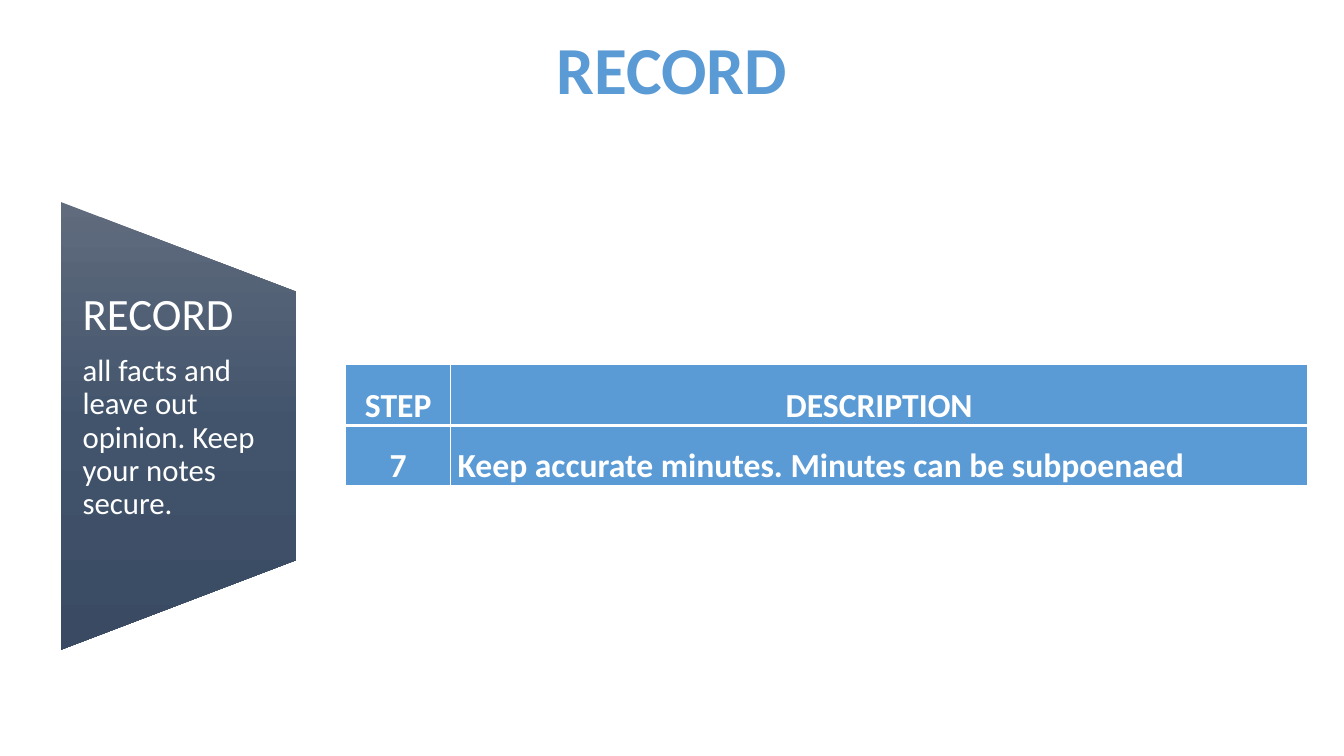
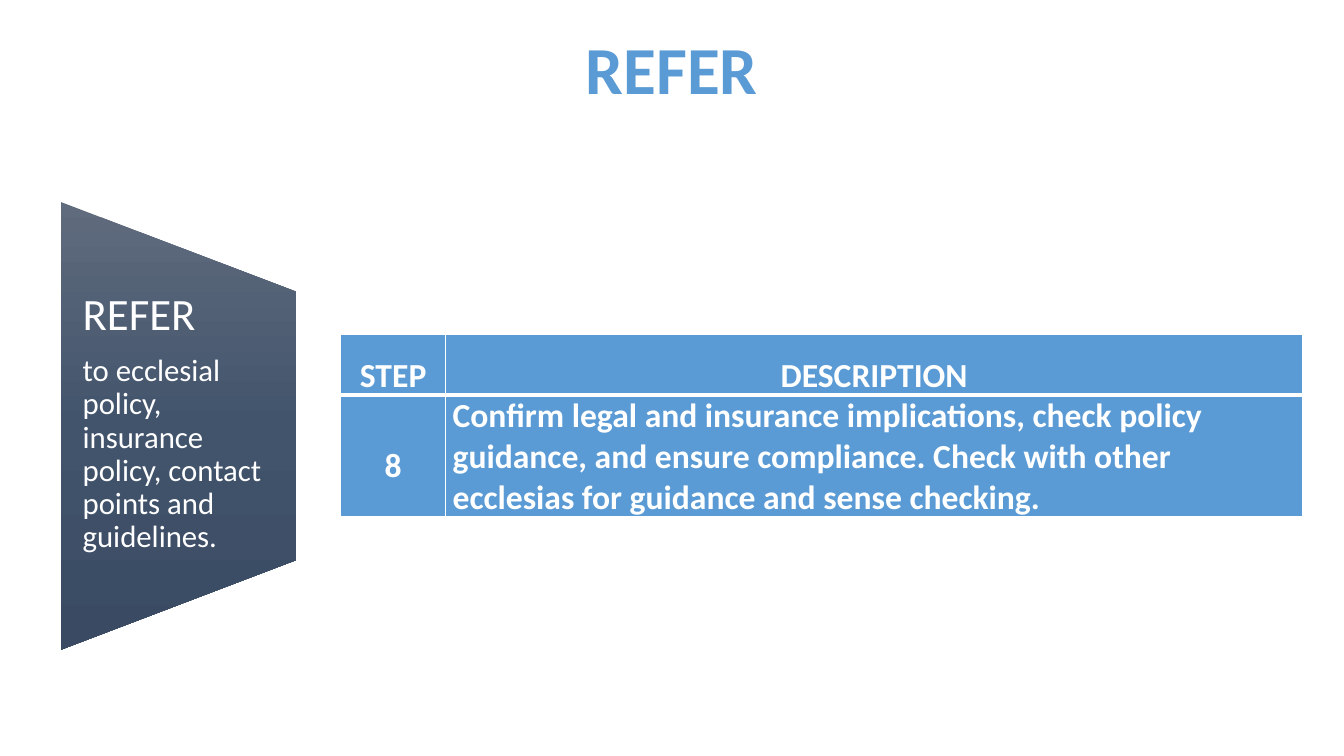
from dataclasses import dataclass

from lxml import etree
from pptx import Presentation
from pptx.dml.color import RGBColor
from pptx.enum.shapes import MSO_SHAPE
from pptx.enum.text import MSO_ANCHOR, MSO_AUTO_SIZE, PP_ALIGN
from pptx.oxml.ns import qn
from pptx.util import Inches, Pt

CENTER, LEFT = PP_ALIGN.CENTER, PP_ALIGN.LEFT
TOP, MIDDLE = MSO_ANCHOR.TOP, MSO_ANCHOR.MIDDLE
GROW = MSO_AUTO_SIZE.SHAPE_TO_FIT_TEXT
TRAPEZOID = MSO_SHAPE.FLOWCHART_MANUAL_OPERATION

FONT = "Calibri"
BLUE, WHITE = "5B9BD5", "FFFFFF"
PANEL_STOPS = ((0, "606B7D"), (50, "42546C"), (100, "394A62"))
PAGE_WIDTH, PAGE_HEIGHT = 13.33, 7.5
COLUMN_WIDTHS = (1.04, 8.5)
HEADER_HEIGHT = 0.6
THIN, THICK = 1, 3


@dataclass(frozen=True)
class Topic:
    title: str
    title_width: float
    advice: str
    step: str
    description: str
    table_left: float
    table_top: float
    step_height: float
    description_spacing: float


TOPICS = (
    Topic("RECORD", 2.51, "all facts and leave out opinion. Keep your notes secure.",
          "7", "Keep accurate minutes. Minutes can be subpoenaed",
          3.43, 3.62, 0.6, 1.5),
    Topic("REFER", 1.92,
          "to ecclesial policy, insurance policy, contact points and guidelines.",
          "8", "Confirm legal and insurance implications, check policy guidance, "
          "and ensure compliance. Check with other ecclesias for guidance and "
          "sense checking.",
          3.38, 3.32, 1.2, 1.0),
)


def color(value: str) -> RGBColor:
    return RGBColor.from_string(value)


def style_paragraph(para, text: str, size: float, fill: str, bold: bool = False,
                    align=LEFT, spacing: float = 1.0, after: float = 0) -> None:
    para.text = text
    para.alignment = align
    para.line_spacing = spacing
    para.space_after = Pt(after)
    para.font.name = FONT
    para.font.size = Pt(size)
    para.font.bold = bold
    para.font.color.rgb = color(fill)


def add_color_element(parent, value: str) -> None:
    etree.SubElement(parent, qn("a:srgbClr"), val=value)


def set_page_gradient(shape) -> None:
    shape.fill.gradient()
    gradient = shape.fill._xPr.find(qn("a:gradFill"))
    gradient.set("rotWithShape", "0")
    stops = gradient.find(qn("a:gsLst"))
    for stop in list(stops):
        stops.remove(stop)
    for percent, value in PANEL_STOPS:
        add_color_element(
            etree.SubElement(stops, qn("a:gs"), pos=str(percent * 1000)), value)
    gradient.find(qn("a:lin")).set("ang", "5400000")


def set_borders(cell, top: float, bottom: float) -> None:
    properties = cell._tc.get_or_add_tcPr()
    sides = (("L", THIN), ("R", THIN), ("T", top), ("B", bottom))
    for position, (side, width) in enumerate(sides):
        line = etree.Element(qn(f"a:ln{side}"), w=str(Pt(width)))
        add_color_element(etree.SubElement(line, qn("a:solidFill")), WHITE)
        properties.insert(position, line)


def add_title(page, topic: Topic) -> None:
    box = page.shapes.add_textbox(
        Inches((PAGE_WIDTH - topic.title_width) / 2), Inches(0.17),
        Inches(topic.title_width), Inches(0.93))
    frame = box.text_frame
    frame.word_wrap = False
    frame.auto_size = GROW
    style_paragraph(frame.paragraphs[0], topic.title, 48, BLUE, True, CENTER, 1.07, 8)


def add_panel(page, topic: Topic) -> None:
    panel = page.shapes.add_shape(
        TRAPEZOID, Inches(-0.45), Inches(3.06), Inches(4.44), Inches(2.33))
    panel.rotation = 270
    panel.shadow.inherit = False
    panel.line.fill.background()
    set_page_gradient(panel)

    box = page.shapes.add_textbox(Inches(0.6), Inches(2.89), Inches(2.33), Inches(2.67))
    frame = box.text_frame
    frame.word_wrap = True
    frame.margin_left = frame.margin_right = Inches(0.22)
    frame.margin_top = frame.margin_bottom = 0
    style_paragraph(frame.paragraphs[0], topic.title, 32, WHITE, spacing=0.9, after=11)
    style_paragraph(frame.add_paragraph(), topic.advice, 22, WHITE, spacing=0.9, after=8)


def fill_cell(cell, text: str, align, anchor, spacing: float) -> None:
    cell.margin_left = cell.margin_right = Inches(0.07)
    cell.margin_top = cell.margin_bottom = 0
    cell.vertical_anchor = anchor
    cell.fill.solid()
    cell.fill.fore_color.rgb = color(BLUE)
    style_paragraph(cell.text_frame.paragraphs[0], text, 24, WHITE, True, align, spacing)


def add_step_table(page, topic: Topic) -> None:
    heights = (HEADER_HEIGHT, topic.step_height)
    table = page.shapes.add_table(
        2, 2, Inches(topic.table_left), Inches(topic.table_top),
        Inches(sum(COLUMN_WIDTHS)), Inches(sum(heights))).table
    for column, width in zip(table.columns, COLUMN_WIDTHS):
        column.width = Inches(width)
    for row, height in zip(table.rows, heights):
        row.height = Inches(height)

    fill_cell(table.cell(0, 0), "STEP", CENTER, TOP, 1.5)
    fill_cell(table.cell(0, 1), "DESCRIPTION", CENTER, TOP, 1.5)
    fill_cell(table.cell(1, 0), topic.step, CENTER, MIDDLE, 1.5)
    fill_cell(table.cell(1, 1), topic.description, LEFT, MIDDLE,
              topic.description_spacing)
    for column in range(len(COLUMN_WIDTHS)):
        set_borders(table.cell(0, column), THIN, THICK)
        set_borders(table.cell(1, column), THICK, THIN)


def main() -> None:
    deck = Presentation()
    deck.slide_width = Inches(PAGE_WIDTH)
    deck.slide_height = Inches(PAGE_HEIGHT)
    blank = deck.slide_layouts[6]
    for topic in TOPICS:
        page = deck.slides.add_slide(blank)
        add_title(page, topic)
        add_panel(page, topic)
        add_step_table(page, topic)
    deck.save("out.pptx")


if __name__ == "__main__":
    main()
